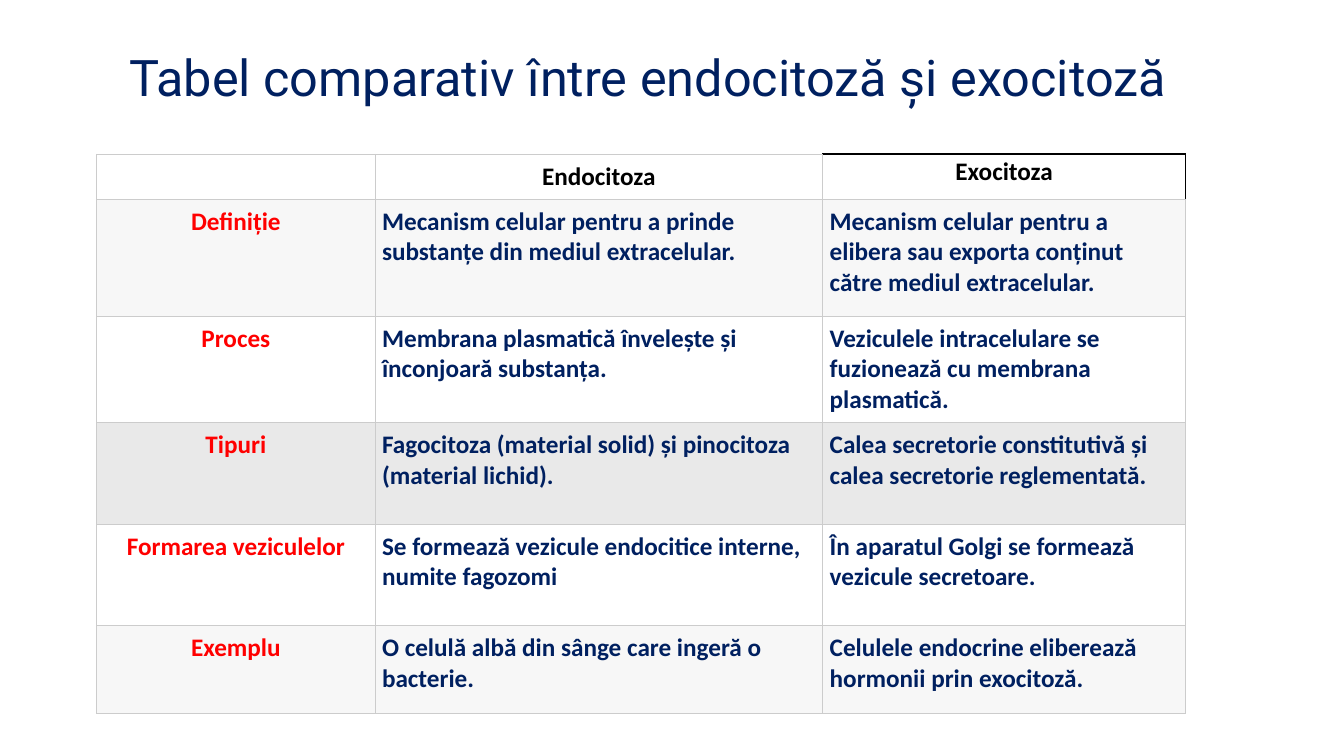
from lxml.etree import SubElement as Sub
from pptx import Presentation
from pptx.dml.color import RGBColor as RGB
from pptx.enum.text import MSO_ANCHOR as Anchor, PP_ALIGN as Align
from pptx.oxml.ns import qn
from pptx.util import Inches, Pt

NAVY, RED, BLACK, GREY = "002060", "FF0000", "000000", "CCCCCC"
COLS = [2.76, 4.44, 3.6]
ROWS = [0.43, 1.16, 0.87, 1.01, 1.01, 0.87]
FILLS = ["FFFFFF", "F7F7F7", "FFFFFF", "E9E9E9", "FFFFFF", "F7F7F7"]
DATA = [
    ["", "Endocitoza", "Exocitoza"],
    ["Definiție",
     "Mecanism celular pentru a prinde substanțe din mediul extracelular.",
     "Mecanism celular pentru a elibera sau exporta conținut către mediul extracelular."],
    ["Proces",
     "Membrana plasmatică învelește și înconjoară substanța.",
     "Veziculele intracelulare se fuzionează cu membrana plasmatică."],
    ["Tipuri",
     "Fagocitoza (material solid) și pinocitoza (material lichid).",
     "Calea secretorie constitutivă și calea secretorie reglementată."],
    ["Formarea veziculelor",
     "Se formează vezicule endocitice interne, numite fagozomi",
     "În aparatul Golgi se formează vezicule secretoare."],
    ["Exemplu",
     "O celulă albă din sânge care ingeră o bacterie.",
     "Celulele endocrine eliberează hormonii prin exocitoză."],
]


def paint(target, color):
    target.rgb = RGB.from_string(color)


class Page:
    def __init__(self, deck):
        self.slide = deck.slides.add_slide(deck.slide_layouts[5])

    def label(self, para, text, size, font, color, align, bold=False):
        para.text = text
        para.alignment = align
        para.font.size = Pt(size)
        para.font.name = font
        para.font.bold = bold
        paint(para.font.color, color)

    def title(self, text, left, top, width, height):
        box = self.slide.shapes.title
        box.left, box.top = Inches(left), Inches(top)
        box.width, box.height = Inches(width), Inches(height)
        frame = box.text_frame
        frame.word_wrap = True
        frame.vertical_anchor = Anchor.MIDDLE
        para = frame.paragraphs[0]
        self.label(para, text, 36, "Roboto", NAVY, Align.CENTER)
        para.line_spacing = 0.9

    def edge(self, cell, side, color, width):
        line = Sub(cell._tc.get_or_add_tcPr(), qn("a:ln" + side), w=str(Pt(width)))
        fill = Sub(line, qn("a:solidFill"))
        Sub(fill, qn("a:srgbClr"), val=color)

    def cell(self, cell, text, row, col):
        last = row == 0 and col == 2
        dark = {"R": (BLACK, 0.75), "T": (BLACK, 1.5)} if last else {}
        for side in "LRTB":
            self.edge(cell, side, *dark.get(side, (GREY, 0.75)))
        if last:
            cell.fill.background()
        else:
            cell.fill.solid()
            paint(cell.fill.fore_color, FILLS[row])
        wide, tall = (0.04, 0.02) if last else (0.07, 0.07)
        cell.margin_left = cell.margin_right = Inches(wide)
        cell.margin_top = cell.margin_bottom = Inches(tall)
        color = BLACK if row == 0 else RED if col == 0 else NAVY
        align = Align.CENTER if row == 0 or col == 0 else Align.LEFT
        self.label(cell.text_frame.paragraphs[0], text, 18, "Calibri", color, align, True)

    def table(self, data, left, top):
        grid = self.slide.shapes.add_table(
            len(ROWS), len(COLS), Inches(left), Inches(top),
            Inches(sum(COLS)), Inches(sum(ROWS))).table
        grid.first_row = grid.horz_banding = False
        for col, width in zip(grid.columns, COLS):
            col.width = Inches(width)
        for row, height in zip(grid.rows, ROWS):
            row.height = Inches(height)
        for r, texts in enumerate(data):
            for c, text in enumerate(texts):
                self.cell(grid.cell(r, c), text, r, c)


def main():
    deck = Presentation()
    deck.slide_width, deck.slide_height = Inches(13.33), Inches(7.5)
    page = Page(deck)
    page.title("Tabel comparativ între endocitoză și exocitoză", 0.96, 0.37, 10.93, 0.86)
    page.table(DATA, 0.96, 1.53)
    deck.save("out.pptx")


if __name__ == "__main__":
    main()
